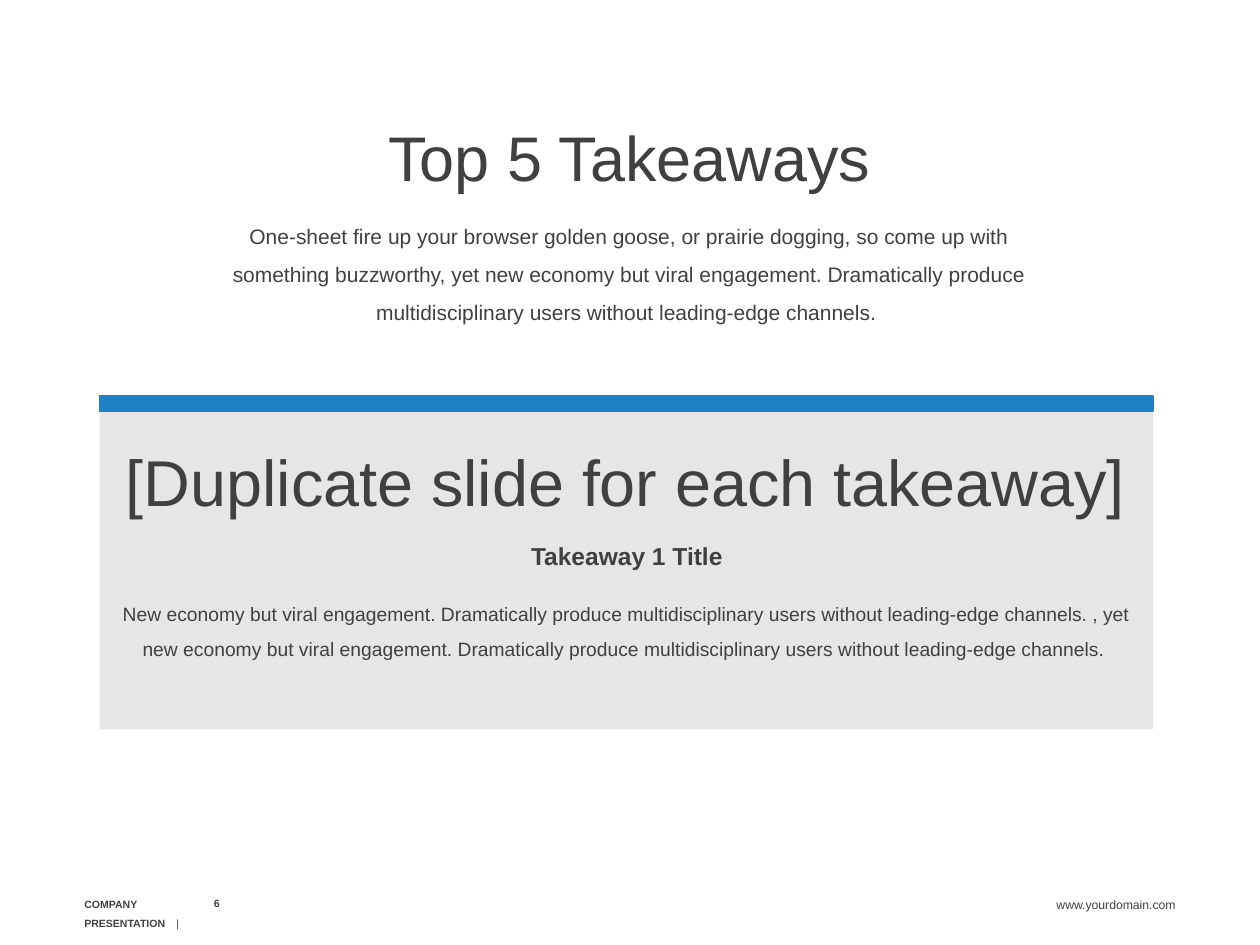
import pptx
import pptx.dml.color
import pptx.enum.shapes
import pptx.enum.text
import pptx.util
from lxml import etree
from pptx.oxml.ns import qn

RGBColor = pptx.dml.color.RGBColor
Align = pptx.enum.text.PP_ALIGN
Anchor = pptx.enum.text.MSO_ANCHOR
Inches = pptx.util.Inches
Pt = pptx.util.Pt

INK = RGBColor(0x40, 0x40, 0x40)
PANEL = RGBColor(0xE6, 0xE6, 0xE6)
ACCENT = RGBColor(0x1E, 0x80, 0xC5)
FONT = "Arial"

# The slide is a grid of 100 columns by 75 rows
CELL = Inches(0.1)
COLUMNS, ROWS = 100, 75
PANEL_LEFT, PANEL_WIDTH = 7.9, 83.6


def grid(*cells):
    return [round(cell * CELL) for cell in cells]


def add_text_box(slide, box, anchor=Anchor.TOP, wrap=True):
    frame = slide.shapes.add_textbox(*grid(*box)).text_frame
    frame.word_wrap = wrap
    frame.vertical_anchor = anchor
    frame.margin_left = frame.margin_right = Inches(0.06)
    frame.margin_top = frame.margin_bottom = Inches(0.03)
    return frame


def format_paragraph(paragraph, align, spacing=None, before=None, after=None):
    paragraph.alignment = align
    paragraph.line_spacing = spacing
    paragraph.space_before = before
    paragraph.space_after = after


def add_run(paragraph, text, size, bold=False):
    run = paragraph.add_run()
    run.text = text
    run.font.name = FONT
    run.font.size = Pt(size)
    run.font.bold = bold
    run.font.color.rgb = INK


def add_line_of_text(slide, box, text, size, align=Align.CENTER, spacing=None,
                     bold=False, **box_options):
    paragraph = add_text_box(slide, box, **box_options).paragraphs[0]
    format_paragraph(paragraph, align, spacing)
    add_run(paragraph, text, size, bold)
    return paragraph


def add_tab_stop(paragraph, cells):
    properties = paragraph._p.get_or_add_pPr()
    tabs = etree.SubElement(properties, qn("a:tabLst"))
    etree.SubElement(tabs, qn("a:tab"), pos=str(grid(cells)[0]), algn="l")


def add_rectangle(slide, box, color, outlined=False):
    shape = slide.shapes.add_shape(
        pptx.enum.shapes.MSO_SHAPE.RECTANGLE, *grid(*box))
    shape.shadow.inherit = False
    shape.fill.solid()
    shape.fill.fore_color.rgb = color
    if outlined:
        shape.line.color.rgb = color
        shape.line.width = Pt(1)
    else:
        shape.line.fill.background()


def add_footer(slide):
    add_line_of_text(slide, (16.1, 70.9, 2.2, 1.6), "6", 6, bold=True, wrap=False)
    company = add_line_of_text(slide, (6.1, 70.5, 11.1, 2.4),
                               "COMPANY PRESENTATION\t", 6, Align.LEFT, 1.5, bold=True)
    add_tab_stop(company, 7.3)
    add_run(company, "|", 6)
    add_line_of_text(slide, (75.5, 70.3, 18.4, 2.4), "www.yourdomain.com", 7,
                     Align.RIGHT, 1.5)


def add_heading(slide):
    add_line_of_text(slide, (12.9, 9.2, 74.1, 6.6), "Top 5 Takeaways", 36,
                     spacing=Pt(42.5))
    add_line_of_text(
        slide, (15.4, 16.5, 69.1, 9.5),
        "One-sheet fire up your browser golden goose, or prairie dogging, so come up "
        "with something buzzworthy, yet new economy but viral engagement. "
        "Dramatically produce multidisciplinary users without leading-edge channels. ",
        12, spacing=1.5, anchor=Anchor.MIDDLE)


def add_takeaway(slide):
    add_rectangle(slide, (PANEL_LEFT, 32.5, PANEL_WIDTH, 25.4), PANEL)
    add_line_of_text(slide, (8.1, 36.6, 83.1, 5.2),
                     "[Duplicate slide for each takeaway]", 37, spacing=Pt(31.1))

    # Takeaway title and description share one box
    frame = add_text_box(slide, (9, 42.6, 81.5, 12.8))
    title = frame.paragraphs[0]
    format_paragraph(title, Align.CENTER, after=Pt(12))
    add_run(title, "Takeaway 1 Title", 14, bold=True)
    description = frame.add_paragraph()
    format_paragraph(description, Align.CENTER, spacing=1.5)
    add_run(description,
            "New economy but viral engagement. Dramatically produce "
            "multidisciplinary users without leading-edge channels. , "
            "yet new economy but viral engagement. Dramatically produce "
            "multidisciplinary users without leading-edge channels. ", 11)

    # Accent bar along the top of the panel
    add_rectangle(slide, (PANEL_LEFT, 31.4, PANEL_WIDTH, 1.2), ACCENT, outlined=True)


def main():
    presentation = pptx.Presentation()
    presentation.slide_width, presentation.slide_height = grid(COLUMNS, ROWS)
    slide = presentation.slides.add_slide(presentation.slide_layouts[6])
    add_footer(slide)
    add_heading(slide)
    add_takeaway(slide)
    presentation.save("out.pptx")


if __name__ == "__main__":
    main()
